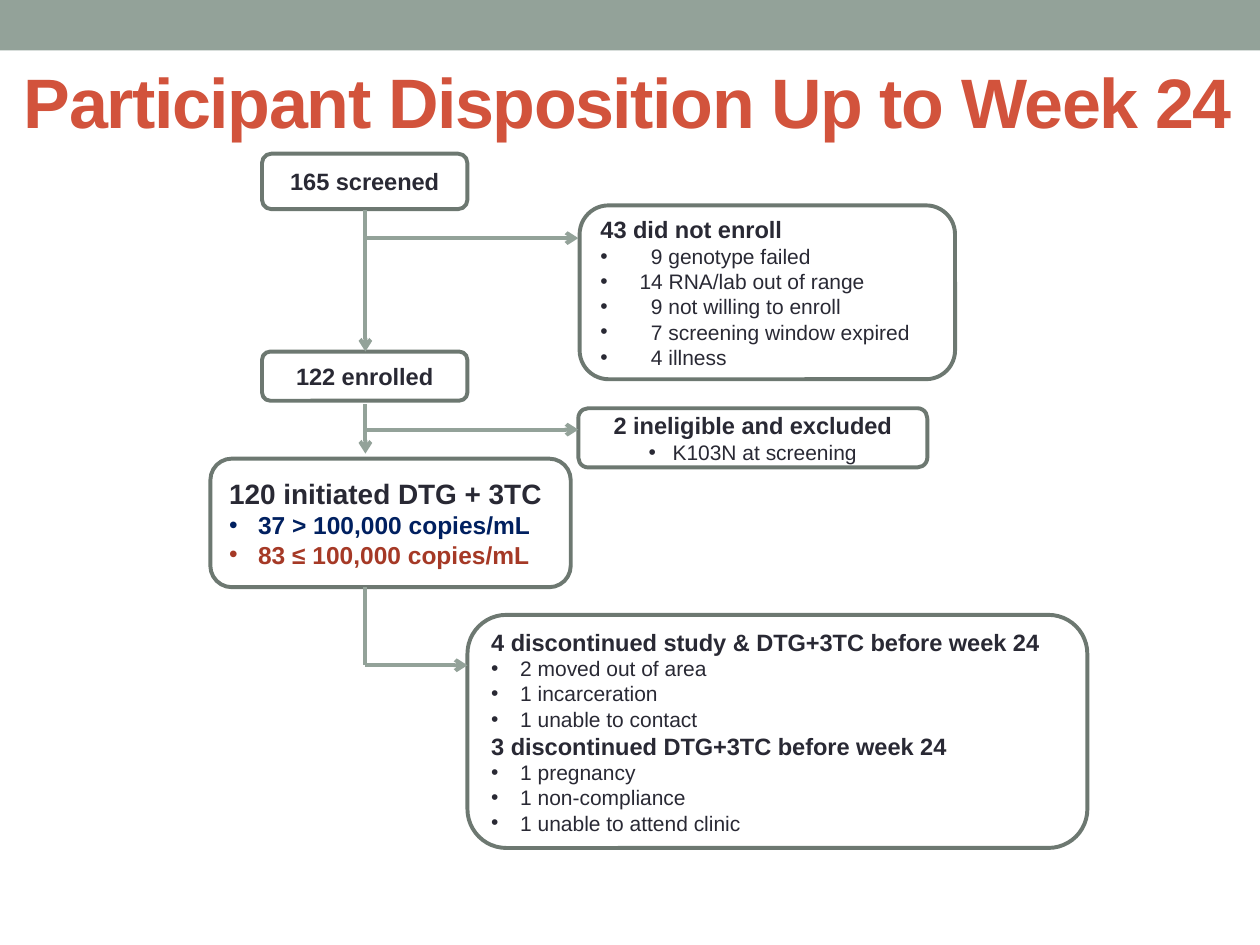
from lxml import etree
from pptx import Presentation
from pptx.dml.color import RGBColor
from pptx.enum.shapes import MSO_CONNECTOR as Connector, MSO_SHAPE as Shape
from pptx.enum.text import MSO_ANCHOR as Anchor, MSO_AUTO_SIZE as AutoSize, PP_ALIGN as Align
from pptx.oxml.ns import qn
from pptx.util import Inches, Pt

WHITE = RGBColor(0xFF, 0xFF, 0xFF)
SAGE = RGBColor(0x93, 0xA2, 0x99)
BORDER = RGBColor(0x6D, 0x78, 0x71)
INK = RGBColor(0x29, 0x29, 0x34)
TITLE_RED = RGBColor(0xD2, 0x53, 0x3C)
NAVY = RGBColor(0x00, 0x20, 0x60)
RUST = RGBColor(0xA5, 0x39, 0x26)


class FlowSlide:
    font_name = "Arial"
    line_width = Pt(2.25)

    def __init__(self, presentation):
        self.slide = presentation.slides.add_slide(presentation.slide_layouts[5])

    def add_run(self, paragraph, text, size, color=INK, bold=False):
        run = paragraph.add_run()
        run.text = text
        run.font.name = self.font_name
        run.font.size = Pt(size)
        run.font.bold = bold
        run.font.color.rgb = color
        return run

    def title(self, text, left, top, width, height):
        shape = self.slide.shapes.title
        shape.left, shape.top = Inches(left), Inches(top)
        shape.width, shape.height = Inches(width), Inches(height)
        frame = shape.text_frame
        frame.auto_size = AutoSize.NONE
        frame.vertical_anchor = Anchor.MIDDLE
        frame.margin_right = 0
        paragraph = frame.paragraphs[0]
        paragraph.alignment = Align.LEFT
        run = self.add_run(paragraph, text, 40, TITLE_RED, True)
        run.font._element.set("spc", "-80")

    def shape(self, kind, left, top, width, height, fill):
        shape = self.slide.shapes.add_shape(
            kind, Inches(left), Inches(top), Inches(width), Inches(height))
        shape.shadow.inherit = False
        shape.fill.solid()
        shape.fill.fore_color.rgb = fill
        return shape

    def band(self, height):
        self.shape(Shape.RECTANGLE, 0, 0, 10, height, SAGE).line.fill.background()

    def box(self, left, top, width, height, items, align=Align.LEFT):
        """Each item is (text, size, bold, color, indent); an indent gives a bullet."""
        shape = self.shape(Shape.ROUNDED_RECTANGLE, left, top, width, height, WHITE)
        shape.line.color.rgb = BORDER
        shape.line.width = self.line_width
        frame = shape.text_frame
        frame.word_wrap = True
        frame.vertical_anchor = Anchor.MIDDLE
        for index, (text, size, bold, color, indent) in enumerate(items):
            paragraph = frame.add_paragraph() if index else frame.paragraphs[0]
            paragraph.alignment = align
            if indent:
                self.bullet(paragraph, indent)
            self.add_run(paragraph, text, size, color, bold)

    def bullet(self, paragraph, indent):
        properties = paragraph._p.get_or_add_pPr()
        properties.set("marL", str(Inches(indent)))
        properties.set("indent", str(-Inches(indent)))
        etree.SubElement(properties, qn("a:buFont")).set("typeface", self.font_name)
        etree.SubElement(properties, qn("a:buChar")).set("char", "•")

    def line(self, x1, y1, x2, y2, arrow=True):
        connector = self.slide.shapes.add_connector(
            Connector.STRAIGHT, Inches(x1), Inches(y1), Inches(x2), Inches(y2))
        connector.line.color.rgb = SAGE
        connector.line.width = self.line_width
        if arrow:
            outline = connector.line._get_or_add_ln()
            etree.SubElement(outline, qn("a:tailEnd")).set("type", "arrow")
        etree.SubElement(connector._element.spPr, qn("a:effectLst"))


def heading(text, size=13.5):
    return text, size, True, INK, 0


def detail(text, indent=0.23):
    return text, 12, False, INK, indent


def main():
    presentation = Presentation()
    presentation.slide_width, presentation.slide_height = Inches(10), Inches(7.5)
    flow = FlowSlide(presentation)

    # Header
    flow.band(0.4)
    flow.title("Participant Disposition Up to Week 24", 0.09, 0.4, 9.84, 0.8)

    # Main path
    flow.box(2.08, 1.22, 1.63, 0.44, [heading("165 screened")], Align.CENTER)
    flow.box(2.08, 2.79, 1.63, 0.39, [heading("122 enrolled")], Align.CENTER)
    flow.box(1.67, 3.64, 2.86, 1.02, [
        heading("120 initiated DTG + 3TC", 16),
        ("37 > 100,000 copies/mL", 14, True, NAVY, 0.23),
        ("83 ≤ 100,000 copies/mL", 14, True, RUST, 0.23),
    ])

    # Exits; one-digit counts are indented to line up with the two-digit one
    flow.box(4.6, 1.63, 2.98, 1.38, [
        heading("43 did not enroll"),
        detail("9 genotype failed", 0.4),
        detail("14 RNA/lab out of range", 0.31),
        detail("9 not willing to enroll", 0.4),
        detail("7 screening window expired", 0.4),
        detail("4 illness", 0.4),
    ])
    flow.box(4.59, 3.24, 2.77, 0.47, [
        heading("2 ineligible and excluded"),
        detail("K103N at screening", 0.19),
    ], Align.CENTER)
    flow.box(3.71, 4.88, 4.92, 1.85, [
        heading("4 discontinued study & DTG+3TC before week 24"),
        detail("2 moved out of area"),
        detail("1 incarceration"),
        detail("1 unable to contact"),
        heading("3 discontinued DTG+3TC before week 24"),
        detail("1 pregnancy"),
        detail("1 non-compliance"),
        detail("1 unable to attend clinic"),
    ])

    # Connectors: down the trunk, then out to the exits
    trunk = 2.9
    flow.line(trunk, 1.67, trunk, 2.79)
    flow.line(trunk, 3.21, trunk, 3.6)
    flow.line(trunk, 4.66, trunk, 5.28, arrow=False)
    for y, end in ((1.89, 4.59), (3.41, 4.59), (5.28, 3.71)):
        flow.line(trunk, y, end, y)

    presentation.save("out.pptx")


if __name__ == "__main__":
    main()
